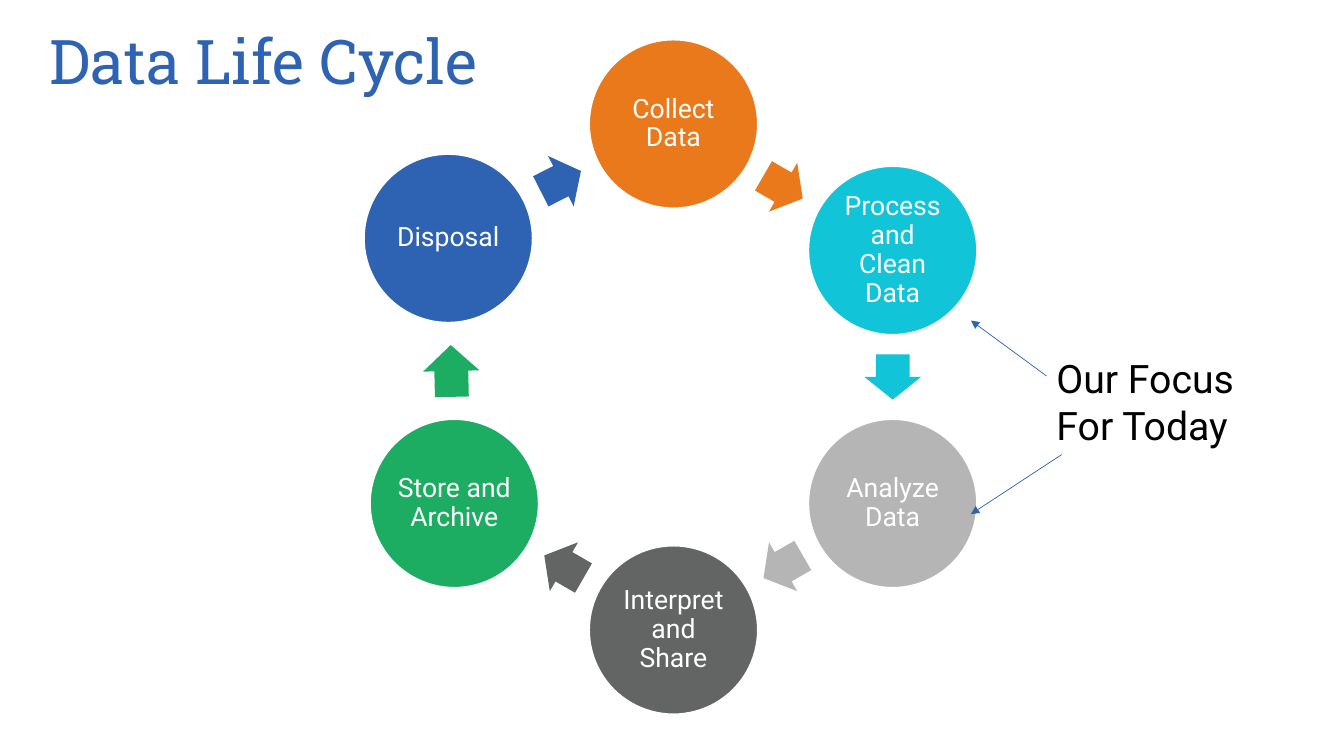
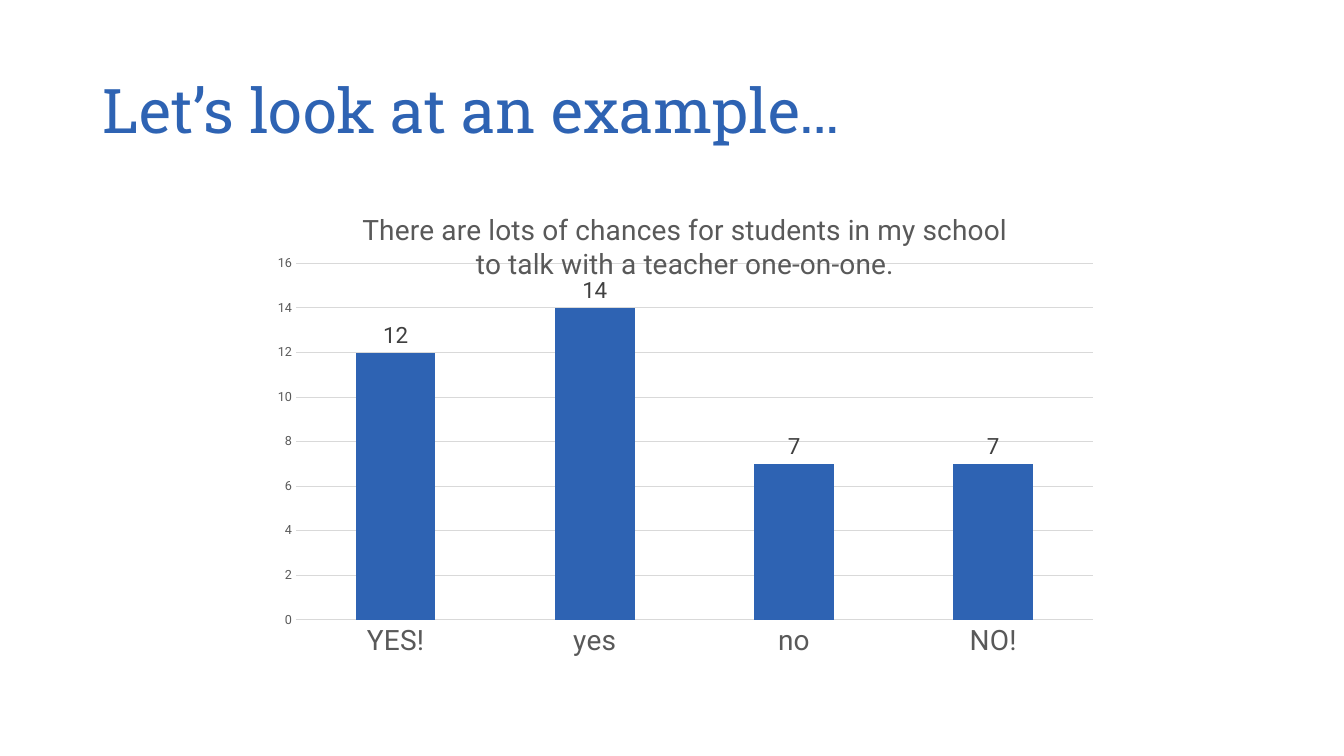
from math import atan2, cos, degrees, hypot, radians, sin

from lxml import etree
from pptx import Presentation
from pptx.chart.data import CategoryChartData
from pptx.dml.color import RGBColor
from pptx.enum.chart import XL_CHART_TYPE, XL_LABEL_POSITION, XL_TICK_MARK
from pptx.enum.shapes import MSO_CONNECTOR, MSO_SHAPE
from pptx.enum.text import MSO_ANCHOR, MSO_AUTO_SIZE, PP_ALIGN
from pptx.oxml import parse_xml
from pptx.oxml.ns import nsdecls, qn
from pptx.util import Inches, Pt

BLUE, WHITE, BLACK = "2E63B3", "FFFFFF", "000000"
GRAY, DARK, RULE = "595959", "404040", "D9D9D9"
HEAD, BODY = "Roboto Slab", "Roboto"

STEPS = [
    ("Collect Data", "EA791C", (0, 0)),
    ("Process and Clean Data", "11C4D8", (0, 0)),
    ("Analyze Data", "B5B5B5", (0, 0)),
    ("Interpret and Share", "636464", (0, 0)),
    ("Store and Archive", "1CAC62", (0, 0)),
    ("Disposal", BLUE, (-0.06, -0.12)),
]
HUB, RADIUS, DISC = (6.68, 3.74), 2.51, 1.67
ARROW, SHARE = 0.56, 0.535
FOCUS = "Our Focus For Today"
LINKS = [((10.38, 3.73), (9.63, 3.18)), ((10.53, 4.51), (9.63, 5.1))]

ASK = "There are lots of chances for students in my school to talk with a teacher one-on-one."
VOTES = {"YES!": 12, "yes": 14, "no": 7, "NO!": 7}
PLOT = {"x": 0.04, "y": 0.147, "w": 0.942, "h": 0.719}


def color(code):
    return RGBColor.from_string(code)


def style(font, size, code, name=BODY):
    font.size, font.name, font.bold = Pt(size), name, False
    font.color.rgb = color(code)


def paint(shape, code):
    shape.shadow.inherit = False
    shape.fill.solid()
    shape.fill.fore_color.rgb = color(code)
    shape.line.fill.background()


def place(kind, shapes, mid, wide, high):
    x, y = mid
    return shapes.add_shape(kind, Inches(x - wide / 2), Inches(y - high / 2),
                            Inches(wide), Inches(high))


def start(deck, text, box):
    slide = deck.slides.add_slide(deck.slide_layouts[5])
    title = slide.shapes.title
    title.left, title.top, title.width, title.height = map(Inches, box)
    frame = title.text_frame
    frame.text = text
    frame.auto_size = MSO_AUTO_SIZE.NONE
    frame.vertical_anchor = MSO_ANCHOR.MIDDLE
    para = frame.paragraphs[0]
    para.alignment, para.line_spacing = PP_ALIGN.LEFT, 0.9
    style(para.font, 44, BLUE, HEAD)
    return slide.shapes


def disc(shapes, text, code, mid):
    shape = place(MSO_SHAPE.OVAL, shapes, mid, DISC, DISC)
    paint(shape, code)
    shape.line.color.rgb = color(WHITE)
    shape.line.width = Pt(1)
    frame = shape.text_frame
    frame.word_wrap = True
    frame.margin_left = frame.margin_right = Inches(0.03)
    frame.margin_top = frame.margin_bottom = Inches(0.03)
    frame.vertical_anchor = MSO_ANCHOR.MIDDLE
    frame.text = text
    para = frame.paragraphs[0]
    para.alignment, para.line_spacing = PP_ALIGN.CENTER, 0.9
    style(para.font, 19, WHITE)


def arrow(shapes, code, here, there):
    dx, dy = there[0] - here[0], there[1] - here[1]
    mid = here[0] + dx / 2, here[1] + dy / 2
    size = (hypot(dx, dy) - DISC) * SHARE
    shape = place(MSO_SHAPE.RIGHT_ARROW, shapes, mid, size, ARROW)
    shape.adjustments[0], shape.adjustments[1] = 0.6, 0.5
    shape.rotation = degrees(atan2(dy, dx)) % 360
    paint(shape, code)


def link(shapes, tip, end):
    line = shapes.add_connector(MSO_CONNECTOR.STRAIGHT, *map(Inches, tip + end))
    line.line.color.rgb = color(BLUE)
    line.line.width = Pt(0.5)
    etree.SubElement(line.line._get_or_add_ln(), qn("a:tailEnd"), type="triangle")
    etree.SubElement(line._element.spPr, qn("a:effectLst"))


def cycle(deck):
    shapes = start(deck, "Data Life Cycle", (0.39, 0.19, 11.6, 0.9))
    mids = []
    for i, (_, _, (dx, dy)) in enumerate(STEPS):
        turn = radians(360 / len(STEPS) * i - 90)
        mids.append((HUB[0] + RADIUS * cos(turn) + dx, HUB[1] + RADIUS * sin(turn) + dy))
    for i, (text, code, _) in enumerate(STEPS):
        disc(shapes, text, code, mids[i])
        arrow(shapes, code, mids[i], mids[(i + 1) % len(mids)])
    note = shapes.add_textbox(*map(Inches, (10.38, 3.47, 2.57, 1.04))).text_frame
    note.word_wrap = True
    note.text = FOCUS
    style(note.paragraphs[0].font, 28, BLACK)
    for tip, end in LINKS:
        link(shapes, tip, end)


def layout(chart):
    spots = "".join(f'<c:{k}Mode val="edge"/>' for k in "xy")
    sizes = "".join(f'<c:{k} val="{v}"/>' for k, v in PLOT.items())
    node = parse_xml(f'<c:layout {nsdecls("c")}><c:manualLayout><c:layoutTarget val="inner"/>'
                     f'{spots}{sizes}</c:manualLayout></c:layout>')
    area = chart._chartSpace.chart.plotArea
    for old in area.findall(qn("c:layout")):
        area.remove(old)
    area.insert(0, node)


def survey(deck):
    shapes = start(deck, "Let’s look at an example…", (0.92, 0.4, 11.5, 1.45))
    data = CategoryChartData()
    data.categories = list(VOTES)
    data.add_series("Series 1", list(VOTES.values()))
    chart = shapes.add_chart(XL_CHART_TYPE.COLUMN_CLUSTERED,
                             *map(Inches, (2.6, 1.89, 8.39, 4.92)), data).chart
    style(chart.font, 10, BLACK)
    chart.has_legend = False
    chart.has_title = True
    title = chart.chart_title
    title.include_in_layout = False
    title.text_frame.text = ASK
    style(title.text_frame.paragraphs[0].font, 20, GRAY)
    layout(chart)

    plot = chart.plots[0]
    plot.gap_width, plot.vary_by_categories = 150, False
    fill = plot.series[0].format.fill
    fill.solid()
    fill.fore_color.rgb = color(BLUE)
    plot.has_data_labels = True
    labels = plot.data_labels
    labels.show_value = True
    labels.position = XL_LABEL_POSITION.OUTSIDE_END
    style(labels.font, 16, DARK)

    cats, vals = chart.category_axis, chart.value_axis
    for axis, size in ((cats, 20), (vals, 9)):
        axis.major_tick_mark = axis.minor_tick_mark = XL_TICK_MARK.NONE
        style(axis.tick_labels.font, size, GRAY)
    vals.minimum_scale, vals.maximum_scale, vals.major_unit = 0, 16, 2
    vals.format.line.fill.background()
    vals.has_major_gridlines = True
    for line in (cats.format.line, vals.major_gridlines.format.line):
        line.color.rgb = color(RULE)
        line.width = Pt(0.75)


def main():
    deck = Presentation()
    deck.slide_width, deck.slide_height = Inches(13.33), Inches(7.5)
    cycle(deck)
    survey(deck)
    deck.save("out.pptx")


if __name__ == "__main__":
    main()
